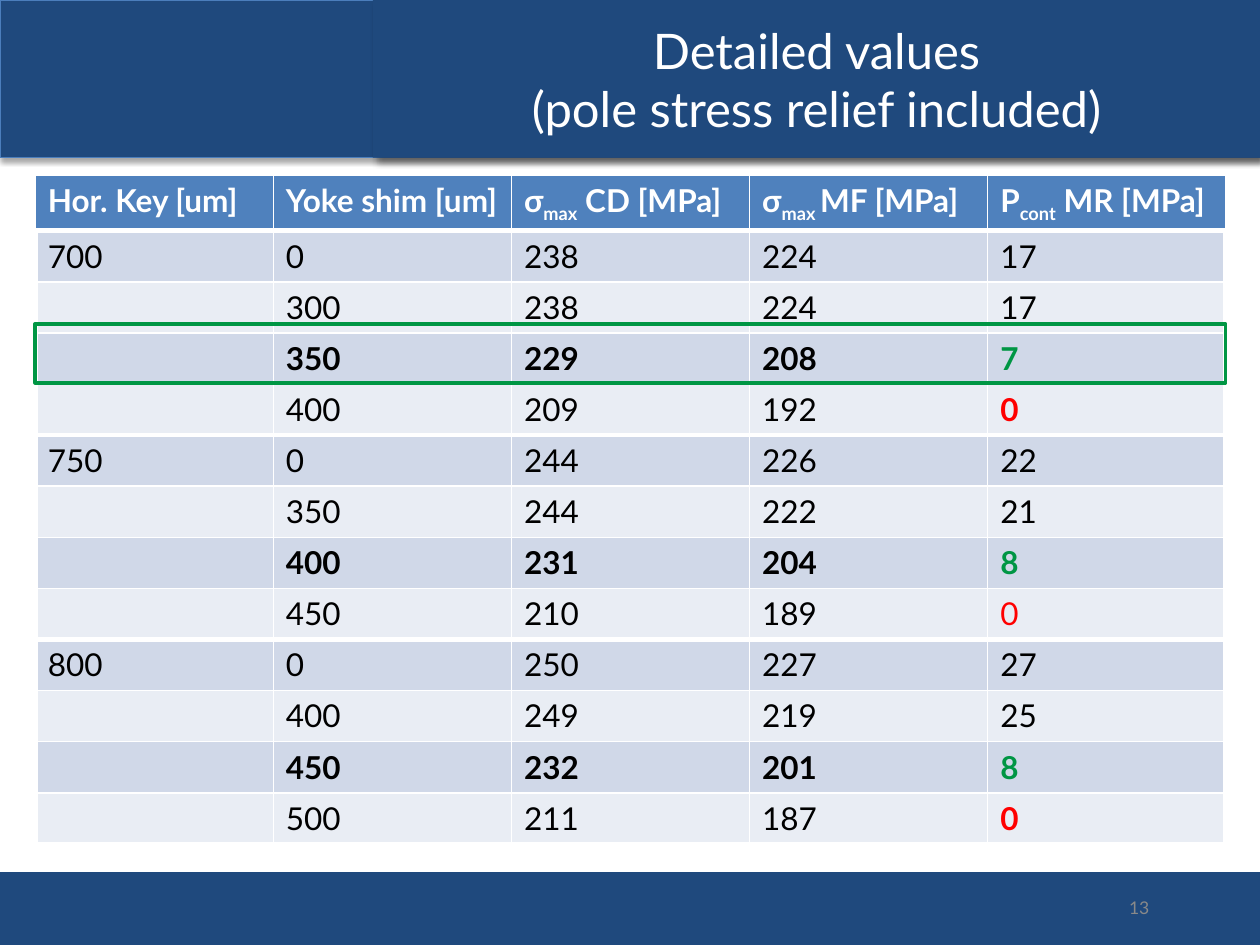
from lxml import etree
from pptx import Presentation
from pptx.dml.color import RGBColor
from pptx.enum import shapes, text
from pptx.oxml import ns
from pptx.util import Cm, Pt

FONT = "Lato"
HUES = {
    "navy": "1F497D", "edge": "4B7EBC", "head": "4F81BD",
    "odd": "D0D8E8", "even": "E9EDF4", "white": "FFFFFF",
    "black": "000000", "green": "009644", "red": "FF0000", "grey": "898989",
}

# A "|" pair encloses a subscript
HEADS = ["Hor. Key [um]", "Yoke shim [um]", "σ|max| CD [MPa]",
         "σ|max |MF [MPa]", "P|cont| MR [MPa]"]

# Horizontal key: rows of yoke shim, coil stress, frame stress, pressure
GROUPS = {
    700: [(0, 238, 224, 17), (300, 238, 224, 17),
          (350, 229, 208, 7), (400, 209, 192, 0)],
    750: [(0, 244, 226, 22), (350, 244, 222, 21),
          (400, 231, 204, 8), (450, 210, 189, 0)],
    800: [(0, 250, 227, 27), (400, 249, 219, 25),
          (450, 232, 201, 8), (500, 211, 187, 0)],
}
BEST, LAST = 2, 3  # rows within a group
PLAIN = 750        # group whose last pressure is not bold


def rgb(hue):
    return RGBColor.from_string(HUES[hue])


def style(run, size, hue, bold=False):
    font = run.font
    font.name, font.size, font.bold = FONT, Pt(size), bold
    font.color.rgb = rgb(hue)


def rect(slide, box, fill=None, line=None, width=1):
    part = slide.shapes.add_shape(shapes.MSO_SHAPE.RECTANGLE,
                                  *(Cm(v) for v in box))
    part.shadow.inherit = False
    if fill:
        part.fill.solid()
        part.fill.fore_color.rgb = rgb(fill)
    else:
        part.fill.background()
    if line:
        part.line.color.rgb = rgb(line)
        part.line.width = Pt(width)
    else:
        part.line.fill.background()
    return part


def shade(part, alpha, blur, dist, angle):
    """Give a shape an outer shadow."""
    list_ = part._element.spPr.find(ns.qn("a:effectLst"))
    outer = etree.SubElement(
        list_, ns.qn("a:outerShdw"), blurRad=str(Pt(blur)), dist=str(Pt(dist)),
        dir=str(angle * 60000), algn="t", rotWithShape="0")
    hue = etree.SubElement(outer, ns.qn("a:srgbClr"), val=HUES["black"])
    etree.SubElement(hue, ns.qn("a:alpha"), val=str(alpha * 1000))


def header(slide, box):
    left, top, wide, high = box
    band = rect(slide, box, "navy", "edge", 0.75)
    shade(band, 35, 3.1, 1.8, 90)
    inset = 7.52
    title = rect(slide, (left + inset, top, wide - inset, high), "navy")
    shade(title, 43, 4, 3, 45)
    frame = title.text_frame
    frame.text = "Detailed values\v(pole stress relief included)"
    frame.word_wrap = True
    frame.vertical_anchor = text.MSO_ANCHOR.MIDDLE
    para = frame.paragraphs[0]
    para.alignment = text.PP_ALIGN.CENTER
    for run in para.runs:
        style(run, 28, "white")


def footer(slide, box):
    left, top, wide, high = box
    rect(slide, box, "navy")
    num = slide.shapes.add_textbox(Cm(left + 21.97), Cm(top + 0.2),
                                   Cm(1.45), Cm(1.02))
    frame = num.text_frame
    frame.text = "13"
    frame.word_wrap = True
    frame.vertical_anchor = text.MSO_ANCHOR.MIDDLE
    frame.paragraphs[0].alignment = text.PP_ALIGN.RIGHT
    style(frame.paragraphs[0].runs[0], 10, "grey")


def fill(cell, label, back, hue, bold, edges):
    """Write a cell; edges are widths for left, right, top, bottom."""
    para = cell.text_frame.paragraphs[0]
    for i, piece in enumerate(str(label).split("|")):
        if piece:
            run = para.add_run()
            run.text = piece
            style(run, 18, hue, bold)
            if i % 2:
                run.font._element.set("baseline", "-25000")
    cell.fill.solid()
    cell.fill.fore_color.rgb = rgb(back)
    props = cell._tc.get_or_add_tcPr()
    for i, (side, width) in enumerate(zip("LRTB", edges)):
        line = etree.Element(ns.qn("a:ln" + side), w=str(Pt(width)))
        solid = etree.SubElement(line, ns.qn("a:solidFill"))
        etree.SubElement(solid, ns.qn("a:srgbClr"), val=HUES["white"])
        props.insert(i, line)


def values(slide, box):
    left, top, wide, high = box
    cols = len(HEADS)
    count = 1 + sum(len(rows) for rows in GROUPS.values())
    table = slide.shapes.add_table(count, cols, *(Cm(v) for v in box)).table
    table.horz_banding = False
    for col in table.columns:
        col.width = Cm(wide / cols)
    for row in table.rows:
        row.height = Cm(high / count)

    # Heading row
    for c, label in enumerate(HEADS):
        fill(table.cell(0, c), label, "head", "white", True, (1, 1, 1, 3))

    # Groups, parted by thick rules
    r = 0
    for key, rows in GROUPS.items():
        for n, row in enumerate(rows):
            r += 1
            back = "odd" if r % 2 else "even"
            for c, label in enumerate((key if n == 0 else "", *row)):
                end = c == cols - 1
                hue = {BEST: "green", LAST: "red"}.get(n) if end else None
                bold = n == BEST or (n == LAST and end and key != PLAIN)
                edges = (3 if c == 0 else 1, 3 if end else 1,
                         3 if n == 0 else 1, 3 if n == LAST else 1)
                fill(table.cell(r, c), label, back, hue or "black", bold, edges)

    # Frame around the chosen row
    rect(slide, (left, top + 3, wide, 1.19), line="green", width=2)


def main():
    deck = Presentation()
    deck.slide_width, deck.slide_height = Cm(25.4), Cm(19.05)
    slide = deck.slides.add_slide(deck.slide_layouts[6])
    footer(slide, (0, 17.58, 25.45, 1.52))
    header(slide, (0, 0, 25.4, 3.18))
    values(slide, (0.71, 3.53, 24, 13.39))
    deck.save("out.pptx")


if __name__ == "__main__":
    main()
